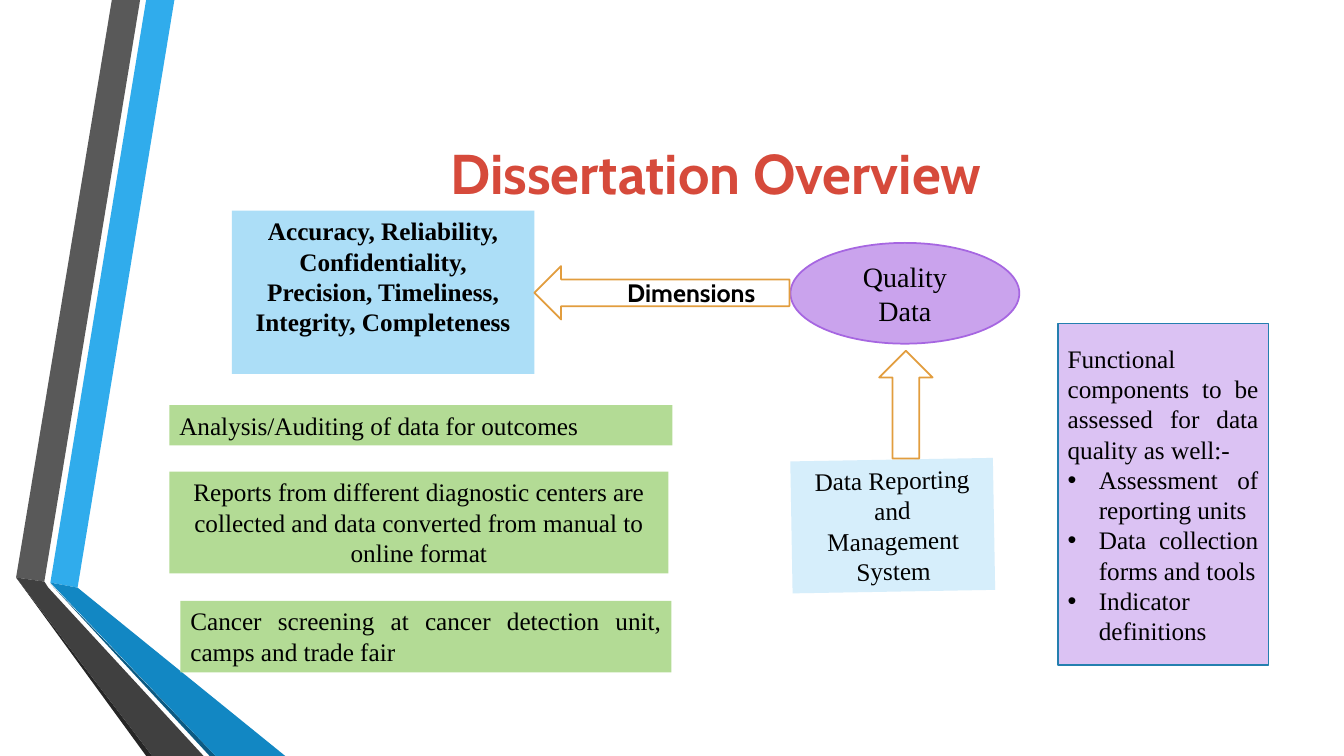
from lxml import etree
from pptx import Presentation
from pptx.dml.color import RGBColor
from pptx.enum.shapes import MSO_SHAPE as SHAPE
from pptx.enum.text import MSO_ANCHOR as ANCHOR, MSO_AUTO_SIZE as AUTO_SIZE, PP_ALIGN as ALIGN
from pptx.oxml.ns import qn
from pptx.util import Inches, Pt

SERIF = "Times New Roman"
SANS = "Cabin"


def color(hex_code):
    return RGBColor.from_string(hex_code)


def add_box(kind, place, fill, line=None, text="", align=ALIGN.CENTER,
            anchor=ANCHOR.TOP, font=SERIF, size=18, bold=False):
    """Add a filled shape; each line of text becomes a paragraph."""
    box = slide.shapes.add_shape(kind, *map(Inches, place))
    box.shadow.inherit = False
    box.fill.solid()
    box.fill.fore_color.rgb = color(fill)
    if line:
        box.line.color.rgb = color(line)
        box.line.width = Pt(1.25)
    else:
        box.line.fill.background()
    if text:
        frame = box.text_frame
        frame.word_wrap = True
        frame.vertical_anchor = anchor
        frame.text = text
        for para in frame.paragraphs:
            para.alignment = align
            para.font.name = font
            para.font.size = Pt(size)
            para.font.bold = bold
            para.font.color.rgb = color("000000")
    return box


deck = Presentation()
deck.slide_width, deck.slide_height = Inches(13.33), Inches(7.5)
slide = deck.slides.add_slide(deck.slide_layouts[5])

# Folded ribbons on the left edge
ribbons = [
    ("30ACEC", [(0.5, 5.78), (0.77, 5.83), (1.73, 0), (1.45, 0)]),
    ("595959", [(1.39, 0), (1.11, 0), (0.16, 5.73), (0.44, 5.77)]),
    ("262626", [(0.16, 5.73), (1.45, 7.5), (1.51, 7.5)]),
    ("0C5A82", [(0.5, 5.79), (2.08, 7.5), (2.14, 7.5)]),
    ("1287C3", [(0.5, 5.78), (2.14, 7.5), (2.83, 7.5), (0.77, 5.83)]),
    ("404040", [(0.16, 5.73), (1.51, 7.5), (2.02, 7.5), (0.48, 5.83), (0.44, 5.77)]),
]
for fill, corners in ribbons:
    points = [(Inches(x), Inches(y)) for x, y in corners]
    builder = slide.shapes.build_freeform(*points[0])
    builder.add_line_segments(points[1:])
    ribbon = builder.convert_to_shape()
    ribbon.shadow.inherit = False
    ribbon.fill.solid()
    ribbon.fill.fore_color.rgb = color(fill)
    ribbon.line.fill.background()

# Title
title = slide.shapes.title
title.left, title.top, title.width, title.height = map(Inches, (1.62, 0.75, 10.96, 1.92))
title.text_frame.text = "Dissertation Overview"
title.text_frame.auto_size = AUTO_SIZE.NONE
title.text_frame.vertical_anchor = ANCHOR.MIDDLE
heading = title.text_frame.paragraphs[0]
heading.alignment = ALIGN.CENTER
heading.font.name = SANS
heading.font.size = Pt(40)
heading.font.bold = True
heading.font.color.rgb = color("D64A3B")

# Quality data and its dimensions
add_box(SHAPE.RECTANGLE, (2.3, 2.09, 3, 1.62), "ACDEF7", bold=True,
        text="Accuracy, Reliability, Confidentiality,\vPrecision, Timeliness, "
             "Integrity, Completeness")
add_box(SHAPE.OVAL, (7.84, 2.41, 2.27, 1), "CAA3ED", "A666E1", "Quality Data",
        anchor=ANCHOR.MIDDLE, size=20)
dimensions = add_box(SHAPE.LEFT_ARROW, (5.3, 2.64, 2.53, 0.53), "FFFFFF", "E29D3E",
                     "Dimensions", anchor=ANCHOR.MIDDLE, font=SANS, bold=True)
dimensions.text_frame.margin_left = Inches(0.55)

# Steps in the data flow
steps = [
    ((1.68, 4.02, 4.99, 0.4), ALIGN.JUSTIFY, "Analysis/Auditing of data for outcomes"),
    ((1.68, 4.68, 4.95, 1.01), ALIGN.CENTER,
     "Reports from different diagnostic centers are collected and data "
     "converted from manual to online format"),
    ((1.79, 5.96, 4.87, 0.71), ALIGN.JUSTIFY,
     "Cancer screening at cancer detection unit, camps and trade fair"),
]
for place, align, text in steps:
    add_box(SHAPE.RECTANGLE, place, "B3DB95", text=text, align=align)

# Reporting system feeding quality data
system = add_box(SHAPE.RECTANGLE, (7.85, 4.56, 2.01, 1.31), "D6EEFB",
                 text="Data Reporting and\nManagement System")
system.rotation = 359
add_box(SHAPE.UP_ARROW, (8.72, 3.48, 0.53, 1.07), "FFFFFF", "E29D3E")

# Functional components
components = add_box(
    SHAPE.RECTANGLE, (10.49, 3.21, 2.09, 3.39), "DBC2F3", "247FAF",
    "Functional components to be assessed for data quality as well:-\n"
    "Assessment of reporting units\nData collection forms and tools\n"
    "Indicator definitions",
    align=ALIGN.JUSTIFY, anchor=ANCHOR.MIDDLE)
for para in components.text_frame.paragraphs[1:]:
    properties = para._p.get_or_add_pPr()
    properties.set("marL", str(Inches(0.31)))
    properties.set("indent", str(-Inches(0.31)))
    bullet_font = etree.Element(qn("a:buFont"), typeface="Arial")
    bullet = etree.Element(qn("a:buChar"), char="•")
    properties.insert(0, bullet_font)
    properties.insert(1, bullet)

deck.save("out.pptx")
